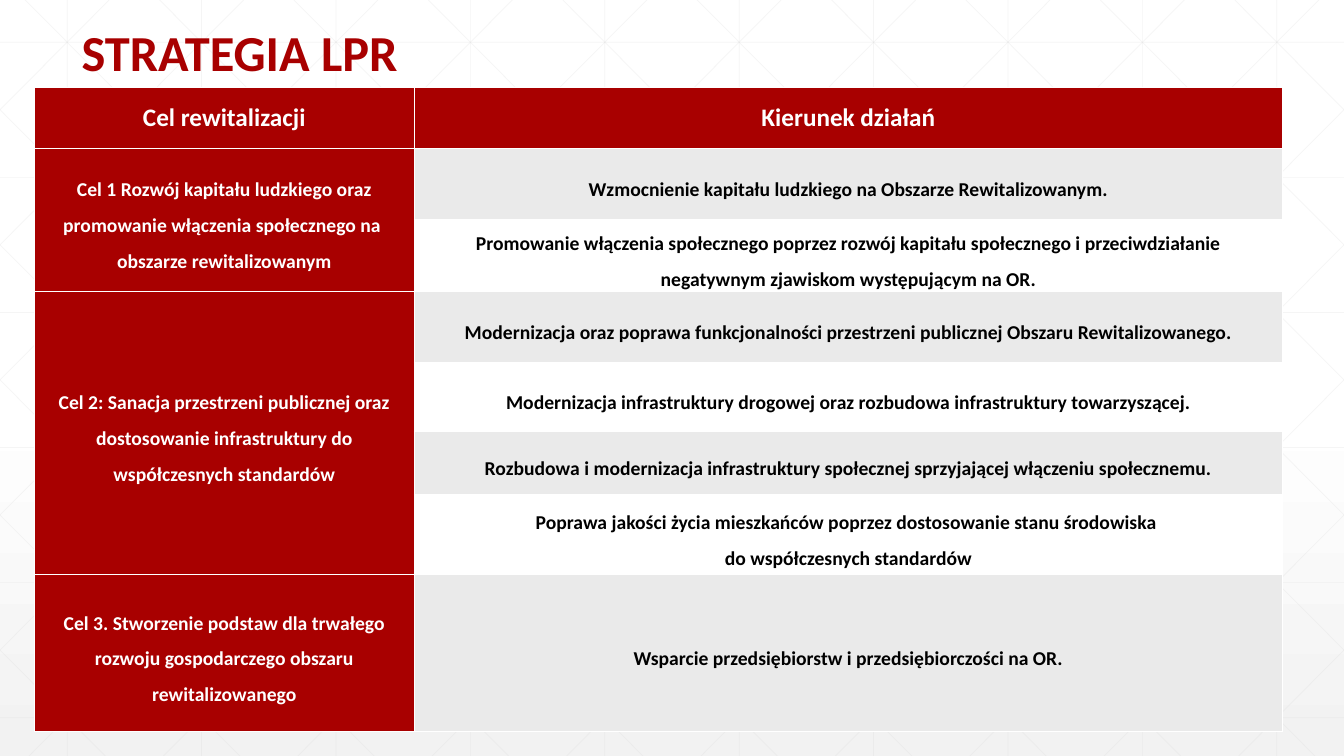
from lxml import etree
from pptx import Presentation
from pptx import util as u
from pptx.dml.color import RGBColor
from pptx.enum import shapes, text
from pptx.oxml.ns import qn

WIDE, HIGH = 13.33, 7.5
FONT = "Calibri"
HUES = {"red": "A80000", "gray": "EAEAEA", "white": "FFFFFF",
        "black": "000000", "mesh": "D9D9D9", "haze": "F2F2F2"}

HEADS = ["Cel rewitalizacji", "Kierunek działań"]
GOALS = [
    ("Cel 1 Rozwój kapitału ludzkiego oraz promowanie włączenia społecznego na \vobszarze rewitalizowanym", [
        ("Wzmocnienie kapitału ludzkiego na Obszarze Rewitalizowanym.", 0.71),
        ("Promowanie włączenia społecznego poprzez rozwój kapitału społecznego i przeciwdziałanie "
         "negatywnym zjawiskom występującym na OR.", 0.68)]),
    ("Cel 2: Sanacja przestrzeni publicznej oraz dostosowanie infrastruktury do współczesnych standardów", [
        ("Modernizacja oraz poprawa funkcjonalności przestrzeni publicznej Obszaru Rewitalizowanego.", 0.71),
        ("Modernizacja infrastruktury drogowej oraz rozbudowa infrastruktury towarzyszącej.", 0.68),
        ("Rozbudowa i modernizacja infrastruktury społecznej sprzyjającej włączeniu społecznemu.", 0.63),
        ("Poprawa jakości życia mieszkańców poprzez dostosowanie stanu środowiska \v"
         "do współczesnych standardów", 0.79)]),
    ("Cel 3. Stworzenie podstaw dla trwałego rozwoju gospodarczego obszaru rewitalizowanego", [
        ("Wsparcie przedsiębiorstw i przedsiębiorczości na OR.", 1.56)]),
]


def tint(name):
    return RGBColor.from_string(HUES[name])


def style(par, size, hue):
    for run in par.runs:
        run.font.name = FONT
        run.font.size = u.Pt(size)
        run.font.bold = True
        run.font.color.rgb = tint(hue)


def add_fade(slide):
    """White page that turns light gray at the foot."""
    fill = slide.background.fill
    fill.gradient()
    fill.gradient_angle = 270
    stops = next(slide.background._cSld.iter(qn("a:gsLst")))
    for stop in list(stops):
        stops.remove(stop)
    for pos, hue in ((0, "white"), (53, "white"), (100, "haze")):
        stop = etree.SubElement(stops, qn("a:gs"), pos=str(pos * 1000))
        etree.SubElement(stop, qn("a:srgbClr"), val=HUES[hue])


def add_line(slide, x1, y1, x2, y2):
    line = slide.shapes.add_connector(
        shapes.MSO_CONNECTOR.STRAIGHT, *(u.Inches(v) for v in (x1, y1, x2, y2)))
    line.line.width = u.Pt(0.5)
    line.line.color.rgb = tint("mesh")
    props = line._element.spPr
    color = next(props.iter(qn("a:srgbClr")))
    etree.SubElement(color, qn("a:alpha"), val="25000")
    etree.SubElement(props, qn("a:effectLst"))


def add_mesh(slide, wide, high):
    """Faint grid with diagonals both ways, cut at the page edges."""
    step = wide / 10
    for col in range(10):
        x = step * (col + 0.5)
        add_line(slide, x, 0, x, high)
    for row in range(6):
        y = 0.42 + 1.34 * row
        add_line(slide, 0, y, wide, y)
    slope = high / 7.46
    for num in range(-5, 10):
        start = 0.25 + step * num
        left, right = max(start, 0), min(start + 7.46, wide)
        top, foot = (left - start) * slope, (right - start) * slope
        add_line(slide, left, top, right, foot)
        add_line(slide, wide - left, top, wide - right, foot)


def add_title(slide, left, top, wide, high):
    title = slide.shapes.title
    title.left, title.top, title.width, title.height = (
        u.Inches(v) for v in (left, top, wide, high))
    frame = title.text_frame
    frame.text = "STRATEGIA LPR"
    frame.word_wrap = False
    frame.auto_size = text.MSO_AUTO_SIZE.NONE
    frame.vertical_anchor = text.MSO_ANCHOR.TOP
    par = frame.paragraphs[0]
    par.alignment = text.PP_ALIGN.LEFT
    style(par, 36, "red")
    slide.shapes._spTree.append(title._element)  # in front of the mesh


def set_cell(cell, words, size, hue, back, gap, inset):
    cell.fill.solid()
    cell.fill.fore_color.rgb = tint(back)
    cell.vertical_anchor = text.MSO_ANCHOR.MIDDLE
    cell.margin_left = cell.margin_right = u.Inches(inset)
    cell.margin_top = cell.margin_bottom = 0
    cell.text_frame.text = words
    par = cell.text_frame.paragraphs[0]
    par.alignment = text.PP_ALIGN.CENTER
    par.line_spacing = gap
    style(par, size, hue)


def add_goals(slide, left, top, wide, high):
    """Goals on the left, each beside its lines of action."""
    highs = [0.6] + [tall for _, acts in GOALS for _, tall in acts]
    table = slide.shapes.add_table(
        len(highs), 2, *(u.Inches(v) for v in (left, top, wide, high))).table
    for col, share in zip(table.columns, (3.77, wide - 3.77)):
        col.width = u.Inches(share)
    for row, tall in zip(table.rows, highs):
        row.height = u.Inches(tall)
    for col, head in enumerate(HEADS):
        set_cell(table.cell(0, col), head, 18, "white", "red", 1.0, 0.06)
    row = 1
    for goal, acts in GOALS:
        first = table.cell(row, 0)
        if len(acts) > 1:
            first.merge(table.cell(row + len(acts) - 1, 0))
        set_cell(first, goal, 14, "white", "red", 1.5, 0.07)
        for act, _ in acts:
            back = "gray" if row % 2 else "white"
            set_cell(table.cell(row, 1), act, 14, "black", back, 1.5, 0.07)
            row += 1


def main():
    deck = Presentation()
    deck.slide_width, deck.slide_height = u.Inches(WIDE), u.Inches(HIGH)
    slide = deck.slides.add_slide(deck.slide_layouts[5])
    add_fade(slide)
    add_mesh(slide, WIDE, HIGH)
    add_goals(slide, 0.34, 0.87, 12.38, 6.36)
    add_title(slide, 0.71, 0.16, 3.37, 0.71)
    deck.save("out.pptx")


if __name__ == "__main__":
    main()
